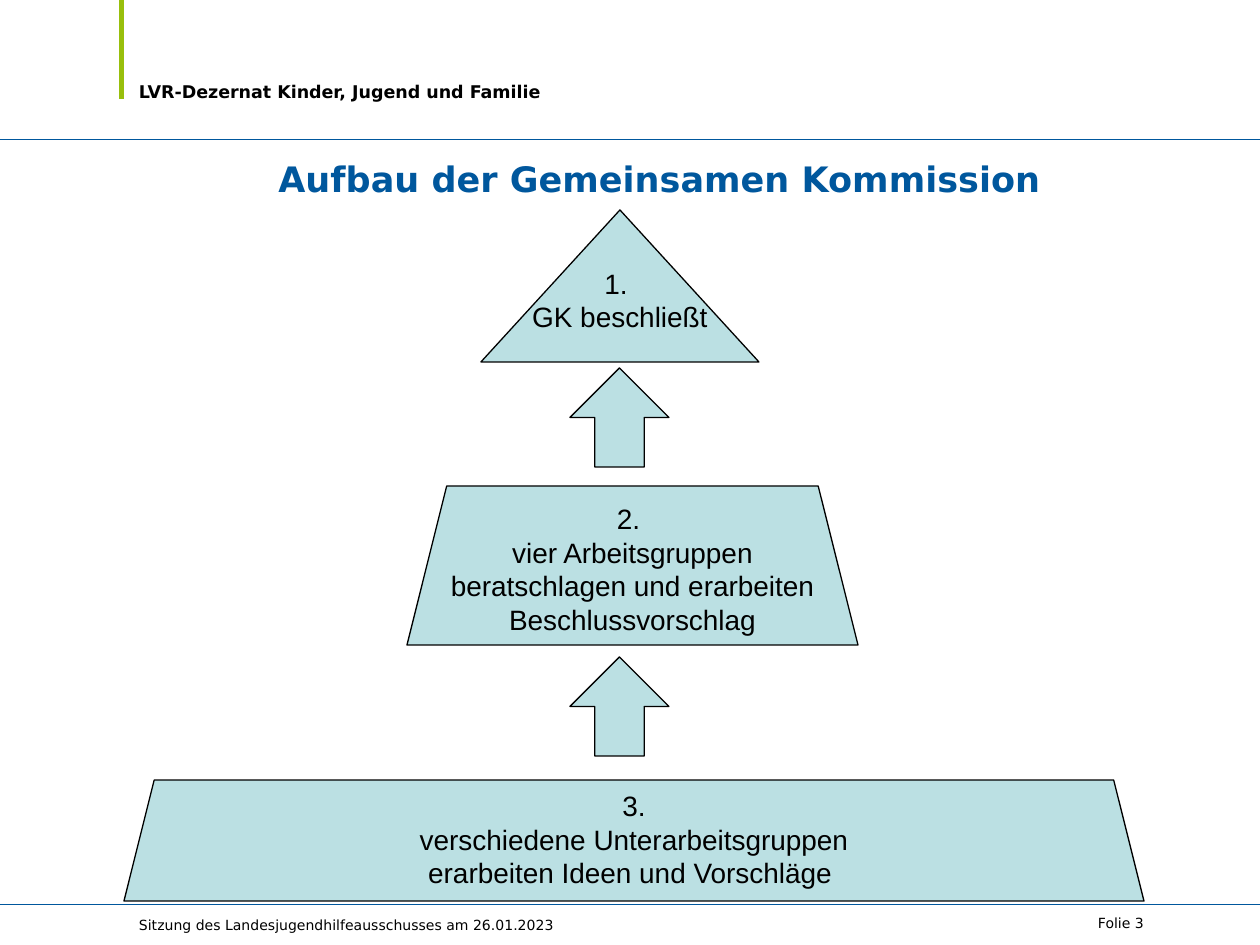
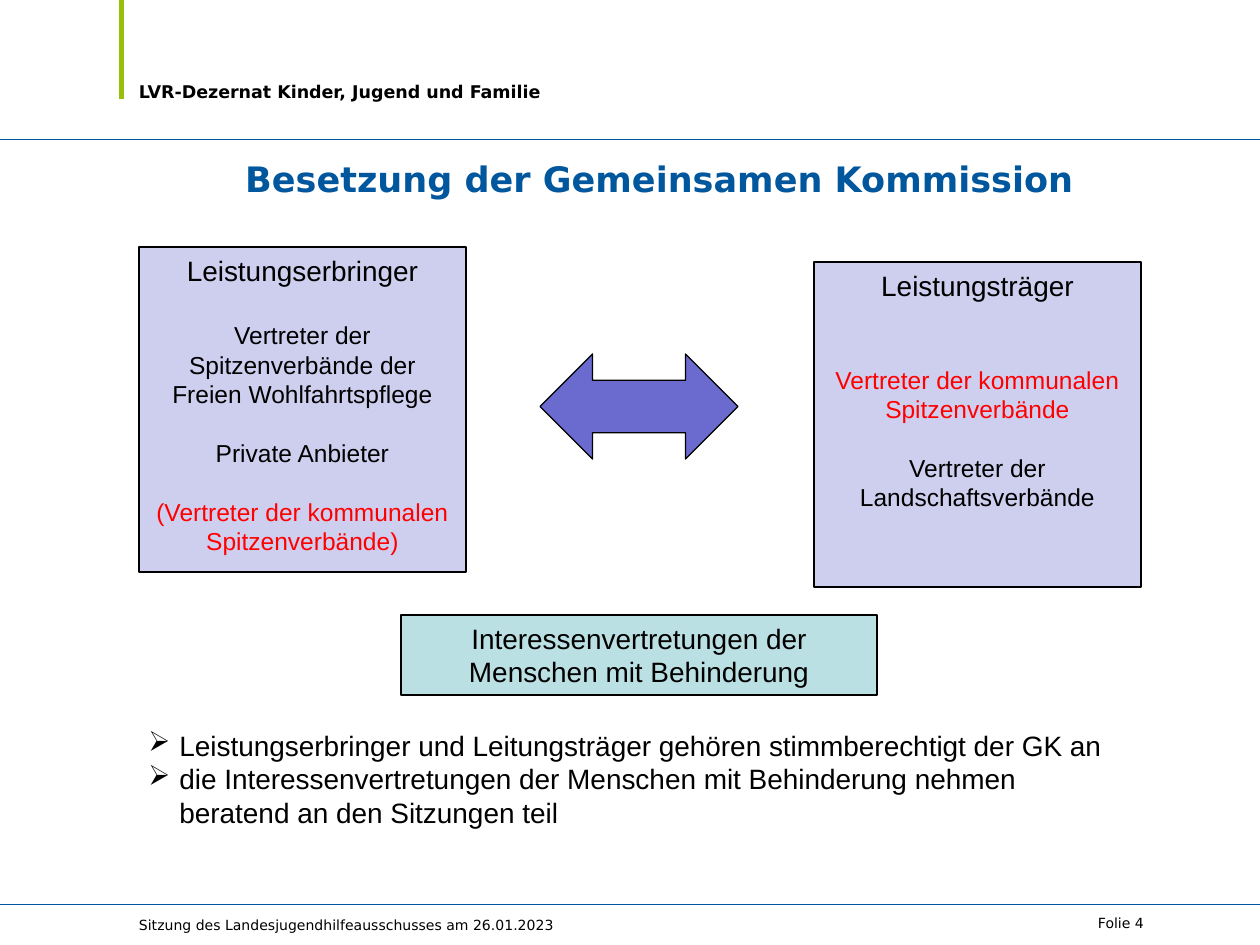
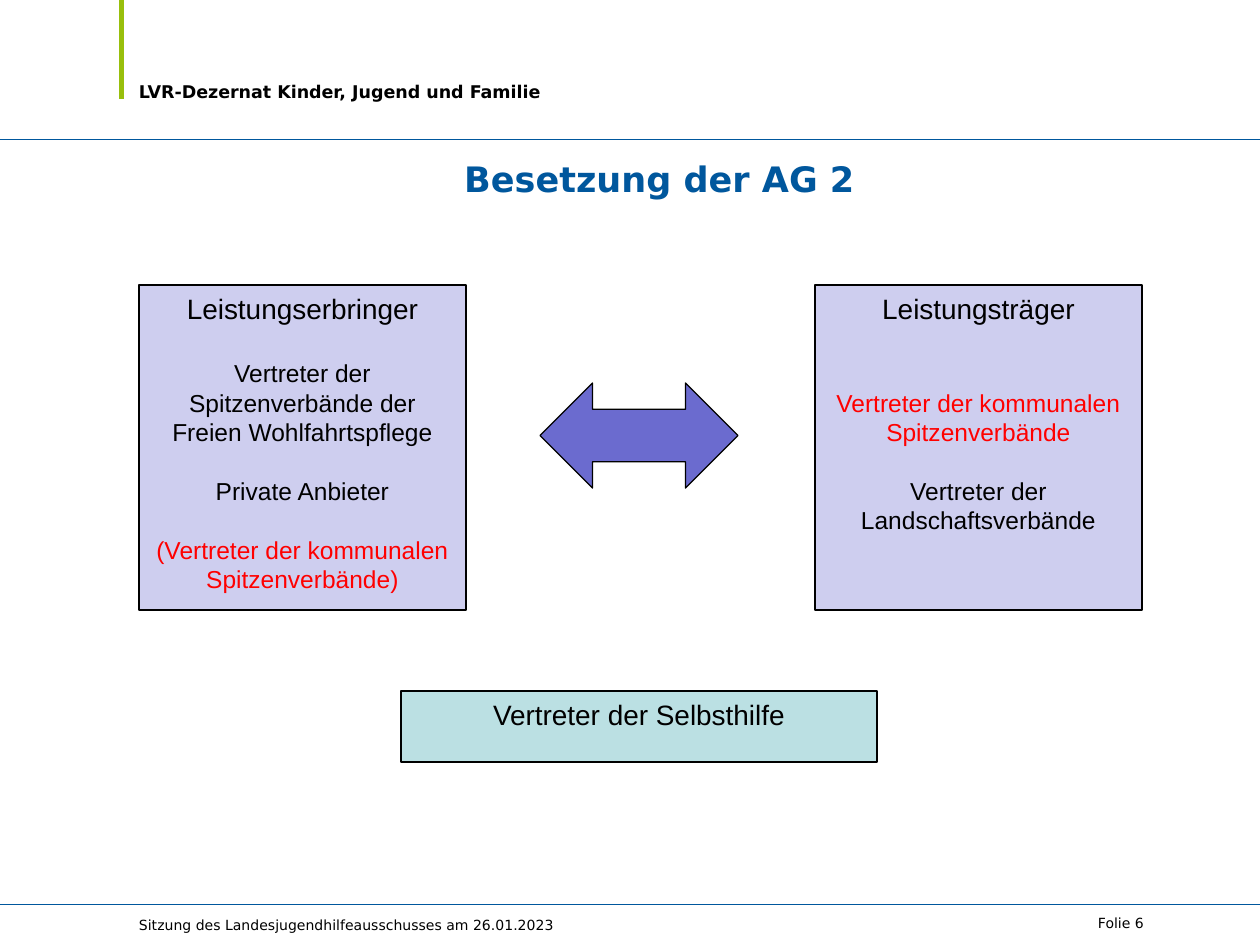
"""Build three slides on the structure and membership of the joint commission."""
from lxml import etree
from pptx import Presentation
from pptx.dml.color import RGBColor
from pptx.enum.shapes import MSO_CONNECTOR, MSO_SHAPE
from pptx.enum.text import MSO_ANCHOR, PP_ALIGN
from pptx.oxml.ns import qn
from pptx.util import Inches, Pt

BLUE = RGBColor(0x00, 0x57, 0x9D)
GREEN = RGBColor(0x98, 0xBF, 0x0C)
TEAL = RGBColor(0xBB, 0xE0, 0xE3)
LILAC = RGBColor(0xCE, 0xCE, 0xEF)
VIOLET = RGBColor(0x6B, 0x6B, 0xCF)
RED = RGBColor(0xFF, 0x00, 0x00)
BLACK = RGBColor(0x00, 0x00, 0x00)

RECTANGLE = MSO_SHAPE.RECTANGLE
TRIANGLE = MSO_SHAPE.ISOSCELES_TRIANGLE
TRAPEZOID = MSO_SHAPE.TRAPEZOID
UP_ARROW = MSO_SHAPE.UP_ARROW
DOUBLE_ARROW = MSO_SHAPE.LEFT_RIGHT_ARROW
LEFT, CENTER, RIGHT = PP_ALIGN.LEFT, PP_ALIGN.CENTER, PP_ALIGN.RIGHT
TOP, MIDDLE, BOTTOM = MSO_ANCHOR.TOP, MSO_ANCHOR.MIDDLE, MSO_ANCHOR.BOTTOM

PX = Inches(1) / 126
WIDTH, HEIGHT = 1260, 945
MARGIN = 139
RULES = (139, 905)
BODY, HEADING = "Arial", "DejaVu Sans"
LINE_FACTOR = 1.2
LARGE, SMALL = 16, 14
LARGE_LINE, SMALL_LINE = LARGE * LINE_FACTOR, SMALL * LINE_FACTOR
BULLET, BULLET_INDENT = "➢", 31

DEPARTMENT = "LVR-Dezernat Kinder, Jugend und Familie"
FOOTER = "Sitzung des Landesjugendhilfeausschusses am 26.01.2023"

STAGES = [
    (TRAPEZOID, (124, 780, 1020, 121),
     ["3.", "verschiedene Unterarbeitsgruppen", "erarbeiten Ideen und Vorschläge "]),
    (TRAPEZOID, (407, 486, 451, 159),
     ["2. ", "vier Arbeitsgruppen beratschlagen und erarbeiten Beschlussvorschlag"]),
    (TRIANGLE, (481, 210, 278, 152), []),
]
STAGE_ARROW_TOPS = (368, 657)
DECISION = ["1. ", "GK beschließt"]

PROVIDERS = [
    {"text": "Leistungserbringer"},
    {"text": "Vertreter der Spitzenverbände der Freien Wohlfahrtspflege",
     "size": SMALL, "before": LARGE_LINE},
    {"text": "Private Anbieter", "size": SMALL, "before": SMALL_LINE},
    {"text": "(Vertreter der kommunalen Spitzenverbände)",
     "size": SMALL, "before": SMALL_LINE, "color": RED},
]
FUNDERS = [
    {"text": "Leistungsträger"},
    {"text": "Vertreter der kommunalen Spitzenverbände",
     "size": SMALL, "before": LARGE_LINE + SMALL_LINE, "color": RED},
    {"text": "Vertreter der Landschaftsverbände", "size": SMALL, "before": SMALL_LINE},
]
VOTING = [
    {"text": "Leistungserbringer und Leitungsträger gehören stimmberechtigt der GK an",
     "bullet": BULLET},
    {"text": "die Interessenvertretungen der Menschen mit Behinderung nehmen",
     "bullet": BULLET},
    {"text": "beratend an den Sitzungen teil"},
]

COMMISSION = {
    "providers_at": (139, 247), "funders_at": (814, 262), "arrow_top": 354,
    "advisors": "Interessenvertretungen der Menschen mit Behinderung",
    "advisors_at": (401, 615, 476, 80),
}
WORKING_GROUP = {
    "providers_at": (139, 285), "funders_at": (815, 285), "arrow_top": 383,
    "advisors": "Vertreter der Selbsthilfe",
    "advisors_at": (401, 691, 476, 71),
}


def px(*lengths):
    return [round(length * PX) for length in lengths]


def write(box, lines, size=LARGE, font=BODY, color=BLACK, bold=False, align=CENTER,
          anchor=TOP, inset=True, spacing=None, indent=0):
    """Fill a box with paragraphs given as strings or dicts of their own format."""
    frame = box.text_frame
    frame.word_wrap = True
    frame.vertical_anchor = anchor
    if not inset:
        frame.margin_left = frame.margin_right = 0
        frame.margin_top = frame.margin_bottom = 0
    for index, line in enumerate(lines):
        form = line if isinstance(line, dict) else {"text": line}
        para = frame.paragraphs[0] if index == 0 else frame.add_paragraph()
        para.alignment = align
        points = form.get("size", size)
        if font == BODY:
            para.line_spacing = Pt(points * LINE_FACTOR)
        elif spacing:
            para.line_spacing = Pt(spacing)
        if "before" in form:
            para.space_before = Pt(form["before"])
        if indent:
            set_indent(para, indent, form.get("bullet"))
        span = para.add_run()
        span.text = form["text"]
        span.font.size = Pt(points)
        span.font.name = font
        span.font.bold = bold
        span.font.color.rgb = form.get("color", color)


def set_indent(para, indent, bullet):
    properties = para._p.get_or_add_pPr()
    width, = px(indent)
    properties.set("marL", str(width))
    properties.set("indent", str(-width if bullet else 0))
    if bullet:
        etree.SubElement(properties, qn("a:buChar")).set("char", bullet)


def add_text(page, place, lines, **form):
    box = page.shapes.add_textbox(*px(*place))
    write(box, lines, **form)


def add_figure(page, kind, place, fill, lines=(), outline=True):
    figure = page.shapes.add_shape(kind, *px(*place))
    figure.shadow.inherit = False
    figure.fill.solid()
    figure.fill.fore_color.rgb = fill
    if outline:
        figure.line.color.rgb = BLACK
        figure.line.width = Pt(0.75)
    else:
        figure.line.fill.background()
    write(figure, lines)


def add_rule(page, y):
    rule = page.shapes.add_connector(MSO_CONNECTOR.STRAIGHT, *px(0, y, WIDTH, y))
    rule.line.color.rgb = BLUE
    rule.line.width = Pt(0.57)
    etree.SubElement(rule._element.spPr, qn("a:effectLst"))


def add_page(deck, title, number):
    page = deck.slides.add_slide(deck.slide_layouts[6])
    add_figure(page, RECTANGLE, (119, 0, 5, 99), GREEN, outline=False)
    for y in RULES:
        add_rule(page, y)
    add_text(page, (MARGIN, 0, 442, 102), [DEPARTMENT], size=10, font=HEADING,
             bold=True, align=LEFT, anchor=BOTTOM, inset=False)
    add_text(page, (124, 165, 1071, 66), [title], size=20, font=HEADING, color=BLUE,
             bold=True, inset=False, spacing=20)
    add_text(page, (882, 903, 262, 39), [f"Folie {number}"], size=8, font=HEADING,
             align=RIGHT, anchor=MIDDLE, inset=False)
    add_text(page, (MARGIN, 903, 694, 39), [FOOTER], size=8, font=HEADING,
             align=LEFT, anchor=MIDDLE, inset=False, spacing=12)
    return page


def add_structure(page):
    for kind, place, lines in STAGES:
        add_figure(page, kind, place, TEAL, lines)
    for top in STAGE_ARROW_TOPS:
        add_figure(page, UP_ARROW, (570, top, 99, 99), TEAL)
    add_text(page, (506, 260, 228, 80), DECISION)


def add_membership(page, group):
    for side, lines in (("providers_at", PROVIDERS), ("funders_at", FUNDERS)):
        add_figure(page, RECTANGLE, (*group[side], 327, 325), LILAC, lines)
    add_figure(page, RECTANGLE, group["advisors_at"], TEAL, [group["advisors"]])
    add_figure(page, DOUBLE_ARROW, (540, group["arrow_top"], 198, 105), VIOLET)


def main():
    deck = Presentation()
    deck.slide_width, deck.slide_height = px(WIDTH, HEIGHT)
    add_structure(add_page(deck, "Aufbau der Gemeinsamen Kommission", 3))
    commission = add_page(deck, "Besetzung der Gemeinsamen Kommission", 4)
    add_membership(commission, COMMISSION)
    add_text(commission, (136, 722, 1005, 115), VOTING, align=LEFT, indent=BULLET_INDENT)
    add_membership(add_page(deck, "Besetzung der AG 2", 6), WORKING_GROUP)
    deck.save("out.pptx")


if __name__ == "__main__":
    main()
